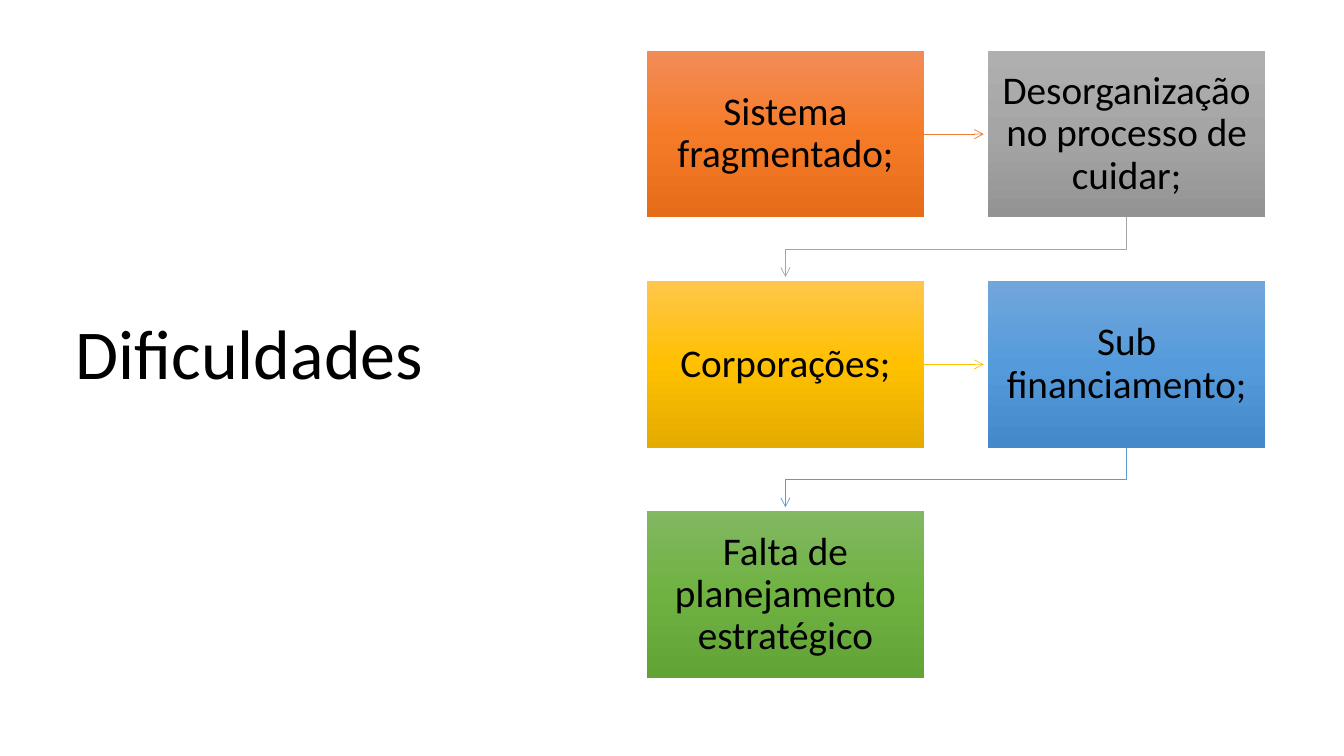
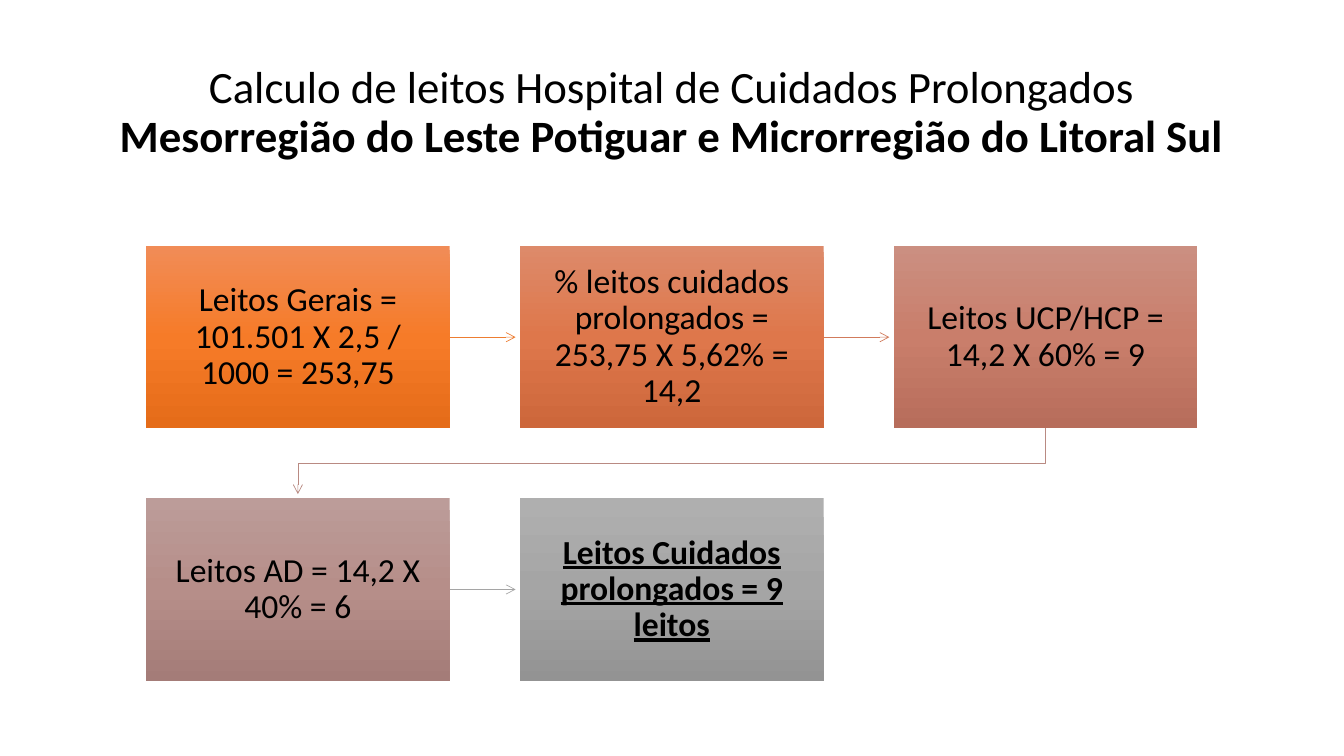
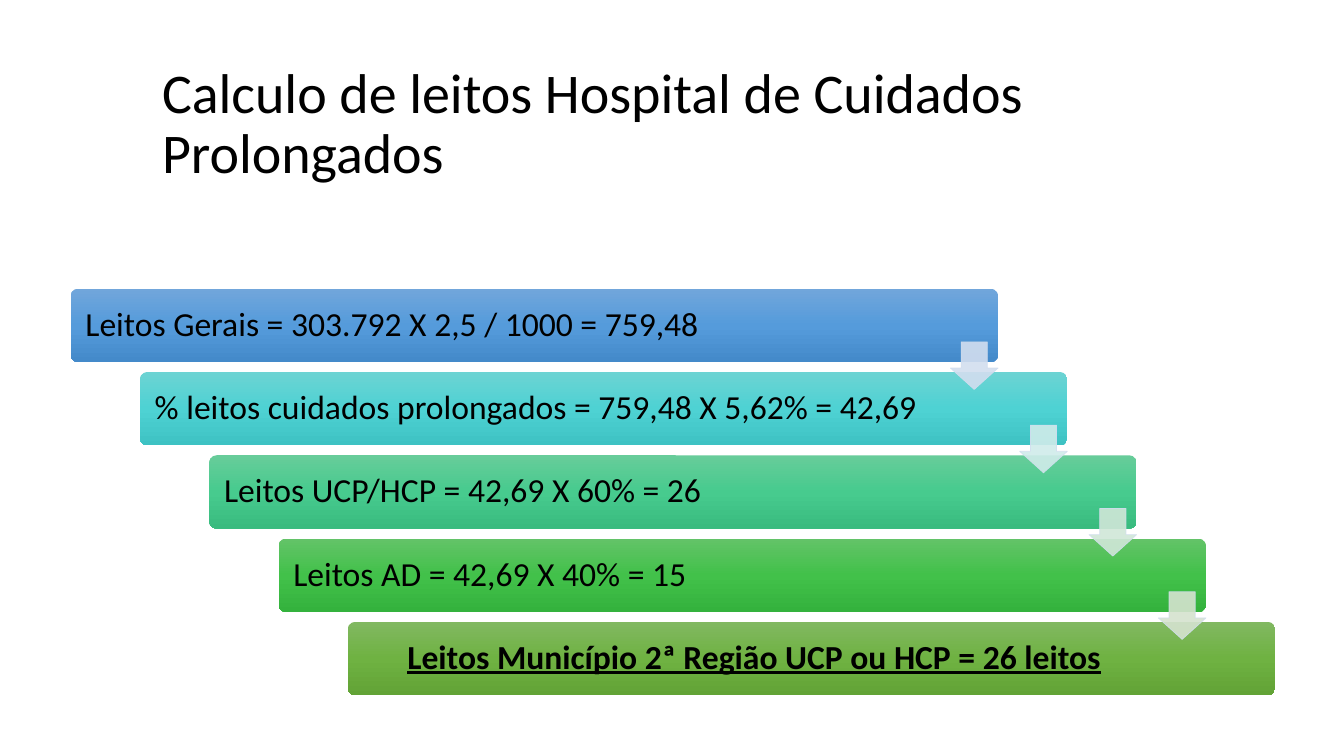
from lxml.etree import SubElement
from copy import deepcopy
from pptx import Presentation
from pptx.dml.color import RGBColor
from pptx.enum.shapes import MSO_CONNECTOR, MSO_SHAPE
from pptx.enum.text import MSO_ANCHOR, PP_ALIGN
from pptx.oxml.ns import qn
from pptx.util import Pt

FONT = "Calibri"
COLORS = {
    "text": "000000",
    "orange": "ED7D31", "terracotta": "D17B5C", "clay": "B98A82",
    "gray": "A5A5A5", "yellow": "FFC000", "blue": "5B9BD5",
    "arrow_line": "D2DEEF", "pale_blue": "D2DEEF", "pale_teal": "D0ECEA",
    "pale_mint": "D0E7D8", "pale_green": "D5E3CF",
}
# Top, middle and bottom colour of each vertical gradient
GRADIENTS = {
    "orange": ("F18C57", "F67B28", "E56C19"),
    "terracotta": ("DD8A6A", "DE774B", "CD673B"),
    "rose": ("CB8F81", "C97E6B", "B76D5B"),
    "mauve": ("BC9C99", "B68E89", "A47C78"),
    "gray": ("AFAFAF", "A5A5A5", "939393"),
    "yellow": ("FFC64B", "FFC000", "E3AB00"),
    "blue": ("71A6DB", "559BDB", "448ACA"),
    "teal": ("6CD3D3", "4ED2D3", "3EC2C3"),
    "mint": ("67CC9A", "47CB8E", "39BB7F"),
    "bright_green": ("63C368", "42C14A", "34B23D"),
    "green": ("81B861", "6FB242", "62A336"),
}
ARROW_GAP = 3


def rgb(name):
    return RGBColor.from_string(COLORS[name])


def add_text(tf, text, size, align=PP_ALIGN.LEFT, bold=False, underline=False):
    """Fill the first paragraph, or add one if it is taken."""
    p = tf.paragraphs[0]
    if p.runs:
        p = tf.add_paragraph()
    p.alignment, p.line_spacing = align, 0.9
    r = p.add_run()
    r.text = text
    r.font.name, r.font.size = FONT, Pt(size)
    r.font.bold, r.font.underline = bold, underline
    r.font.color.rgb = rgb("text")


def set_frame(tf, left=7.2, top=3.6, right=7.2, bottom=3.6):
    tf.word_wrap = True
    tf.vertical_anchor = MSO_ANCHOR.MIDDLE
    tf.margin_left, tf.margin_right = Pt(left), Pt(right)
    tf.margin_top, tf.margin_bottom = Pt(top), Pt(bottom)


def add_title(s, box, lines, **fmt):
    """Each line is a (text, bold) pair."""
    tf = s.shapes.add_textbox(*map(Pt, box)).text_frame
    set_frame(tf)
    for text, bold in lines:
        add_text(tf, text, bold=bold, **fmt)


def add_gradient_box(s, kind, box, gradient):
    sp = s.shapes.add_shape(kind, *map(Pt, box))
    sp.shadow.inherit = False
    sp.line.fill.background()
    sp.fill.gradient()
    sp.fill.gradient_angle = 270
    stops = sp._element.spPr.find(qn("a:gradFill")).find(qn("a:gsLst"))
    stops.append(deepcopy(stops[0]))
    for i, (stop, color) in enumerate(zip(sp.fill.gradient_stops, GRADIENTS[gradient])):
        stop.color.rgb = RGBColor.from_string(color)
        stop.position = i / 2
    return sp


def add_arrow(s, points, color):
    """Draw a straight arrow through two points, a bent one through more."""
    points = [(Pt(x), Pt(y)) for x, y in points]
    if len(points) == 2:
        sp = s.shapes.add_connector(MSO_CONNECTOR.STRAIGHT, *points[0], *points[1])
    else:
        path = s.shapes.build_freeform(*points[0], scale=1.0)
        path.add_line_segments(points[1:], close=False)
        sp = path.convert_to_shape()
        sp.fill.background()
    sp.line.color.rgb = rgb(color)
    sp.line.width = Pt(0.5)
    spPr = sp._element.spPr
    SubElement(spPr.find(qn("a:ln")), qn("a:tailEnd"), type="arrow")
    SubElement(spPr, qn("a:effectLst"))


def add_flow(s, steps, cols, left, top, w, h, pitch_x, pitch_y, margins, size):
    """Lay steps (text, gradient, arrow colour, format) row by row, joined by arrows."""
    corners = [(left + i % cols * pitch_x, top + i // cols * pitch_y)
               for i in range(len(steps))]
    for i, (text, gradient, color, fmt) in enumerate(steps):
        x, y = corners[i]
        sp = add_gradient_box(s, MSO_SHAPE.RECTANGLE, (x, y, w, h), gradient)
        set_frame(sp.text_frame, *margins)
        add_text(sp.text_frame, text, size, PP_ALIGN.CENTER, **fmt)
        if i + 1 == len(steps):
            break
        next_x, next_y = corners[i + 1]
        if next_y == y:
            points = [(x + w, y + h / 2), (next_x - ARROW_GAP, y + h / 2)]
        else:
            start, end, mid = x + w / 2, next_x + w / 2, (y + h + next_y) / 2
            points = [(start, y + h), (start, mid), (end, mid), (end, next_y - ARROW_GAP)]
        add_arrow(s, points, color)


def add_down_arrow(s, x, y, side, color):
    sp = s.shapes.add_shape(MSO_SHAPE.DOWN_ARROW, Pt(x), Pt(y), Pt(side), Pt(side))
    sp.shadow.inherit = False
    sp.adjustments[0], sp.adjustments[1] = 0.55, 0.45
    sp.fill.solid()
    sp.fill.fore_color.rgb = rgb(color)
    sp.line.color.rgb = rgb("arrow_line")
    sp.line.width = Pt(0.5)
    for clr in sp._element.spPr.iter(qn("a:srgbClr")):
        SubElement(clr, qn("a:alpha"), val="90000")


def add_staircase(s, steps, left, top, w, h, pitch_x, pitch_y, side):
    """Stack bars (text, gradient, arrow colour, format), each further right."""
    for i, (text, gradient, _, fmt) in enumerate(steps):
        box = (left + i * pitch_x, top + i * pitch_y, w, h)
        sp = add_gradient_box(s, MSO_SHAPE.ROUNDED_RECTANGLE, box, gradient)
        sp.adjustments[0] = 0.1
        set_frame(sp.text_frame, left=9, right=91)
        add_text(sp.text_frame, text, 24, **fmt)
    for i, (_, _, color, _) in enumerate(steps[:-1]):
        add_down_arrow(s, left + i * pitch_x + w - side, top + i * pitch_y + 38,
                       side, color)


def difficulties(s):
    add_title(s, (46.8, 95, 305, 320), [("Dificuldades", False)], size=50)
    steps = [
        ("Sistema fragmentado;", "orange", "orange", {}),
        ("Desorganização no processo de cuidar;", "gray", "gray", {}),
        ("Corporações;", "yellow", "yellow", {}),
        ("Sub financiamento;", "blue", "blue", {}),
        ("Falta de planejamento estratégico", "green", None, {}),
    ]
    add_flow(s, steps, cols=2, left=462, top=36.3, w=198, h=119, pitch_x=243.7,
             pitch_y=164.5, margins=(9.5, 10, 9.5, 10), size=28)


def regional_beds(s):
    add_title(s, (66, 28.8, 828, 104.4),
              [("Calculo de leitos Hospital de Cuidados Prolongados", False),
               ("Mesorregião do Leste Potiguar e Microrregião do Litoral Sul", True)],
              size=32, align=PP_ALIGN.CENTER)
    steps = [
        ("Leitos Gerais = 101.501 X 2,5 / 1000 = 253,75", "orange", "orange", {}),
        ("% leitos cuidados prolongados = 253,75 X 5,62% = 14,2",
         "terracotta", "terracotta", {}),
        ("Leitos UCP/HCP = 14,2 X 60% = 9", "rose", "clay", {}),
        ("Leitos AD = 14,2 X 40% = 6", "mauve", "gray", {}),
        ("Leitos Cuidados prolongados = 9 leitos", "gray", None,
         {"bold": True, "underline": True}),
    ]
    add_flow(s, steps, cols=3, left=104.3, top=175.7, w=217, h=130.3, pitch_x=267,
             pitch_y=180.2, margins=(10.7, 11.2, 10.7, 11.2), size=24)


def municipal_beds(s):
    add_title(s, (108.7, 27.4, 765, 124),
              [("Calculo de leitos Hospital de Cuidados Prolongados", False)], size=40)
    steps = [
        ("Leitos Gerais = 303.792 X 2,5 / 1000 = 759,48", "blue", "pale_blue", {}),
        ("% leitos cuidados prolongados = 759,48 X 5,62% = 42,69",
         "teal", "pale_teal", {}),
        ("Leitos UCP/HCP = 42,69 X 60% = 26", "mint", "pale_mint", {}),
        ("Leitos AD = 42,69 X 40% = 15", "bright_green", "pale_green", {}),
        ("Leitos Município 2ª Região UCP ou HCP = 26 leitos", "green", None,
         {"bold": True, "underline": True, "align": PP_ALIGN.CENTER}),
    ]
    add_staircase(s, steps, left=50.5, top=206.2, w=662.4, h=52.4,
                  pitch_x=49.5, pitch_y=59.5, side=34)


def main():
    prs = Presentation()
    prs.slide_width, prs.slide_height = Pt(960), Pt(540)
    for build in (difficulties, regional_beds, municipal_beds):
        build(prs.slides.add_slide(prs.slide_layouts[6]))
    prs.save("out.pptx")


if __name__ == "__main__":
    main()
